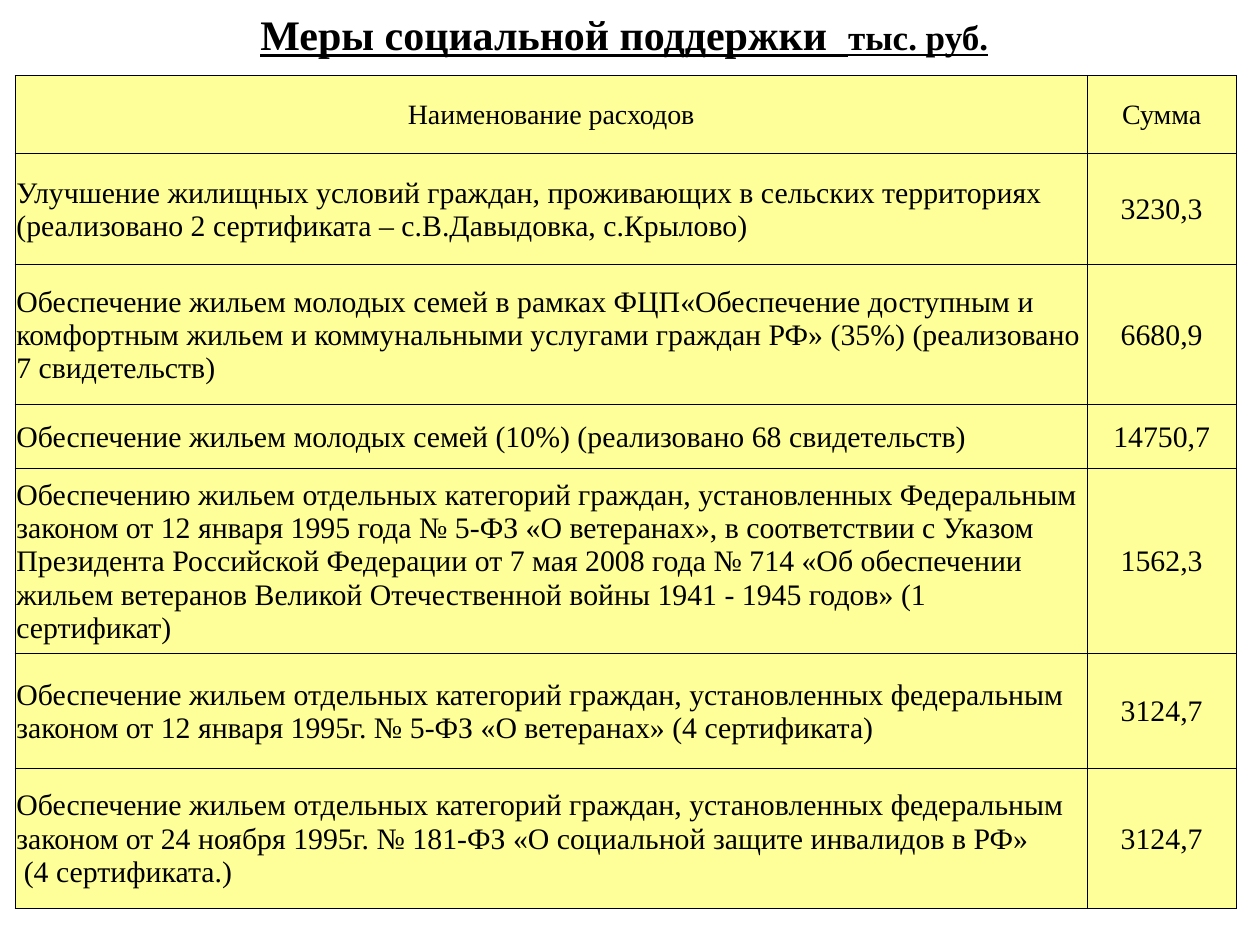
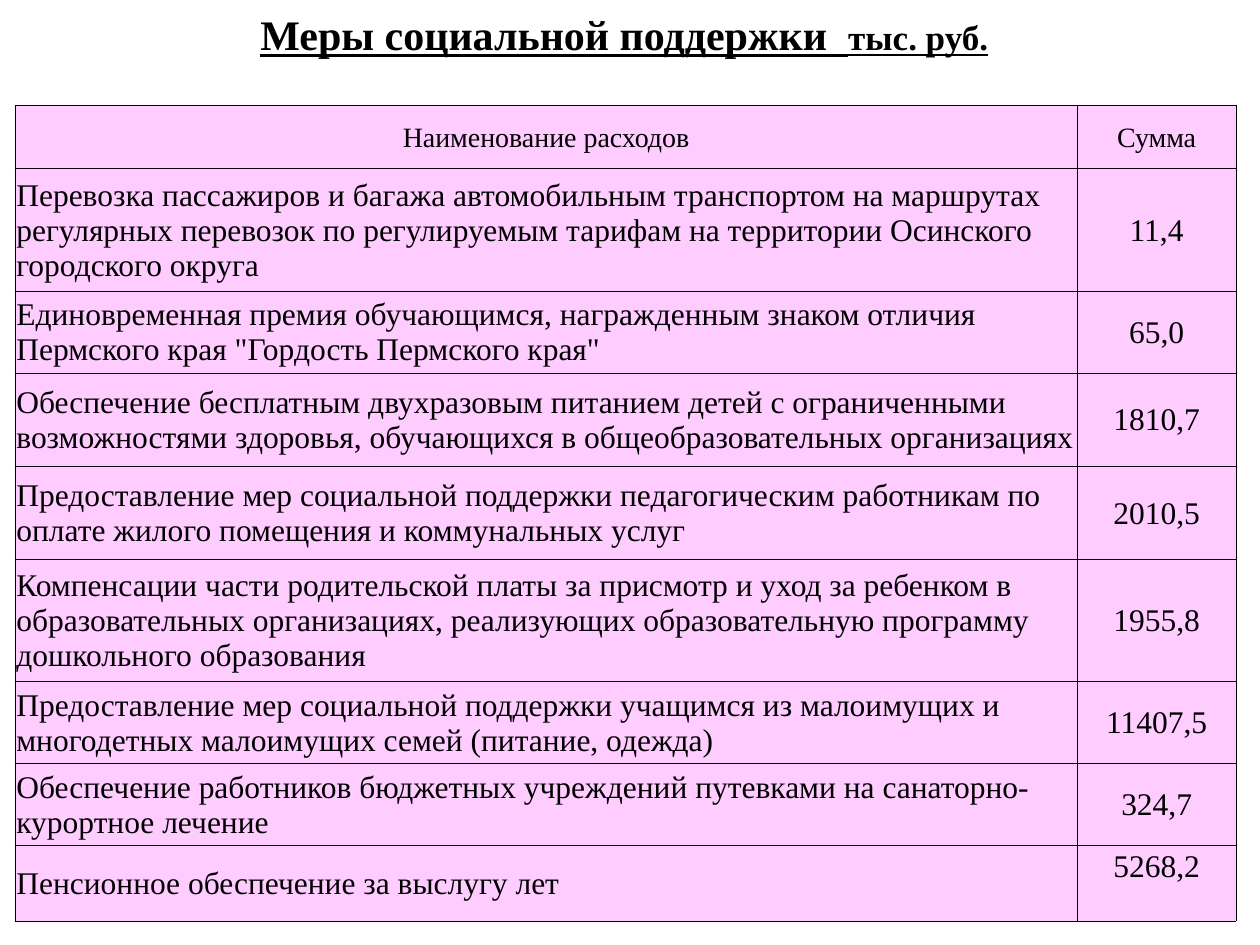
from lxml import etree
from pptx import Presentation
from pptx.dml.color import RGBColor
from pptx.enum.text import MSO_ANCHOR, MSO_AUTO_SIZE, PP_ALIGN
from pptx.oxml.ns import qn
from pptx.util import Inches, Pt

BLACK, YELLOW, PINK = "000000", "FFFF99", "FFCCFF"
TITLE = [("Меры социальной поддержки  ", 24), ("тыс. руб.", 20)]
HEADER = ("Наименование расходов", "Сумма")
CELL_FORMAT = {
    "margin_left": Inches(0.01),
    "margin_right": Inches(0.01),
    "margin_top": Inches(0.01),
    "margin_bottom": 0,
    "vertical_anchor": MSO_ANCHOR.MIDDLE,
}

# Each row: height in inches, expense, amount
HOUSING = [
    (0.88, "Улучшение жилищных условий граждан, проживающих в сельских территориях "
           "(реализовано 2 сертификата – с.В.Давыдовка, с.Крылово)", "3230,3"),
    (1.11, "Обеспечение жильем молодых семей в рамках ФЦП«Обеспечение доступным и "
           "комфортным жильем и коммунальными услугами граждан РФ» (35%) "
           "(реализовано 7 свидетельств)", "6680,9"),
    (0.51, "Обеспечение жильем молодых семей (10%) (реализовано 68 свидетельств)",
     "14750,7"),
    (1.47, "Обеспечению жильем отдельных категорий граждан, установленных Федеральным "
           "законом от 12 января 1995 года № 5-ФЗ «О ветеранах», в соответствии с "
           "Указом Президента Российской Федерации от 7 мая 2008 года № 714 «Об "
           "обеспечении жильем ветеранов Великой Отечественной войны 1941 - 1945 "
           "годов» (1 сертификат)", "1562,3"),
    (0.91, "Обеспечение жильем отдельных категорий граждан, установленных федеральным "
           "законом от 12 января 1995г. № 5-ФЗ «О ветеранах» (4 сертификата)", "3124,7"),
    (1.11, "Обеспечение жильем отдельных категорий граждан, установленных федеральным "
           "законом от 24 ноября 1995г. № 181-ФЗ «О социальной защите инвалидов в РФ»\n"
           " (4 сертификата.)", "3124,7"),
]
SOCIAL = [
    (0.97, "Перевозка пассажиров и багажа автомобильным транспортом на маршрутах "
           "регулярных перевозок по регулируемым тарифам на территории Осинского "
           "городского округа", "11,4"),
    (0.65, "Единовременная премия обучающимся, награжденным знаком отличия Пермского "
           "края \"Гордость Пермского края\"", "65,0"),
    (0.74, "Обеспечение бесплатным двухразовым питанием детей с ограниченными "
           "возможностями здоровья, обучающихся в общеобразовательных организациях",
     "1810,7"),
    (0.74, "Предоставление мер социальной поддержки педагогическим работникам по "
           "оплате жилого помещения и коммунальных услуг", "2010,5"),
    (0.97, "Компенсации части родительской платы за присмотр и уход за ребенком в "
           "образовательных организациях, реализующих образовательную программу "
           "дошкольного образования", "1955,8"),
    (0.65, "Предоставление мер социальной поддержки учащимся из малоимущих и "
           "многодетных малоимущих семей (питание, одежда)", "11407,5"),
    (0.65, "Обеспечение работников бюджетных учреждений путевками на "
           "санаторно-курортное лечение", "324,7"),
    (0.6, "Пенсионное обеспечение за выслугу лет", "5268,2"),
]


def rgb(color):
    return RGBColor.from_string(color)


def set_attrs(obj, values):
    for name, value in values.items():
        setattr(obj, name, value)


class Deck:
    """Shared style and the slide being built."""

    font = "Times New Roman"

    def __init__(self):
        self.prs = Presentation()
        self.prs.slide_width, self.prs.slide_height = Inches(10), Inches(7.5)
        self.s = None

    def slide(self):
        self.s = self.prs.slides.add_slide(self.prs.slide_layouts[6])

    def run(self, p, text, size, **style):
        r = p.add_run()
        r.text = text
        set_attrs(r.font, {"name": self.font, "size": Pt(size), **style})
        r.font.color.rgb = rgb(BLACK)

    def title(self, parts):
        sp = self.s.shapes.add_textbox(Inches(0.35), Inches(0.02),
                                       Inches(9.21), Inches(0.51))
        tf = sp.text_frame
        set_attrs(tf, {"word_wrap": True, "auto_size": MSO_AUTO_SIZE.SHAPE_TO_FIT_TEXT})
        p = tf.paragraphs[0]
        p.alignment = PP_ALIGN.CENTER
        for text, size in parts:
            self.run(p, text, size, bold=True, underline=True)

    def borders(self, cell):
        tc_pr = cell._tc.get_or_add_tcPr()
        for side in ("a:lnL", "a:lnR", "a:lnT", "a:lnB"):
            ln = etree.SubElement(tc_pr, qn(side), w=str(Pt(0.5)))
            fill = etree.SubElement(ln, qn("a:solidFill"))
            etree.SubElement(fill, qn("a:srgbClr"), val=BLACK)

    def cell(self, cell, text, size, align, fill):
        set_attrs(cell, CELL_FORMAT)
        self.borders(cell)
        cell.fill.solid()
        cell.fill.fore_color.rgb = rgb(fill)
        tf = cell.text_frame
        for i, line in enumerate(text.split("\n")):
            p = tf.add_paragraph() if i else tf.paragraphs[0]
            p.alignment = align
            self.run(p, line, size)

    def table(self, top, widths, header_height, items, size, fill):
        rows = [(header_height, *HEADER), *items]
        height = sum(row[0] for row in rows)
        table = self.s.shapes.add_table(len(rows), len(widths), Inches(0.12), Inches(top),
                                        Inches(sum(widths)), Inches(height)).table
        set_attrs(table, {"first_row": False, "horz_banding": False})
        for col, width in zip(table.columns, widths):
            col.width = Inches(width)
        for i, (row_height, *texts) in enumerate(rows):
            table.rows[i].height = Inches(row_height)
            for j, text in enumerate(texts):
                align = PP_ALIGN.LEFT if i and j == 0 else PP_ALIGN.CENTER
                self.cell(table.cell(i, j), text, size if i else 16, align, fill)
        return table


def main():
    deck = Deck()

    # Housing support
    deck.slide()
    deck.title(TITLE)
    deck.table(0.6, (8.51, 1.18), 0.62, HOUSING, 17, YELLOW)

    # Other social support; the pension amount sits at the top of its cell
    deck.slide()
    deck.title(TITLE)
    table = deck.table(0.84, (8.43, 1.26), 0.5, SOCIAL, 18, PINK)
    set_attrs(table.cell(len(SOCIAL), 1),
              {"vertical_anchor": MSO_ANCHOR.TOP, "margin_top": Inches(0.03)})

    deck.prs.save("out.pptx")


if __name__ == "__main__":
    main()
